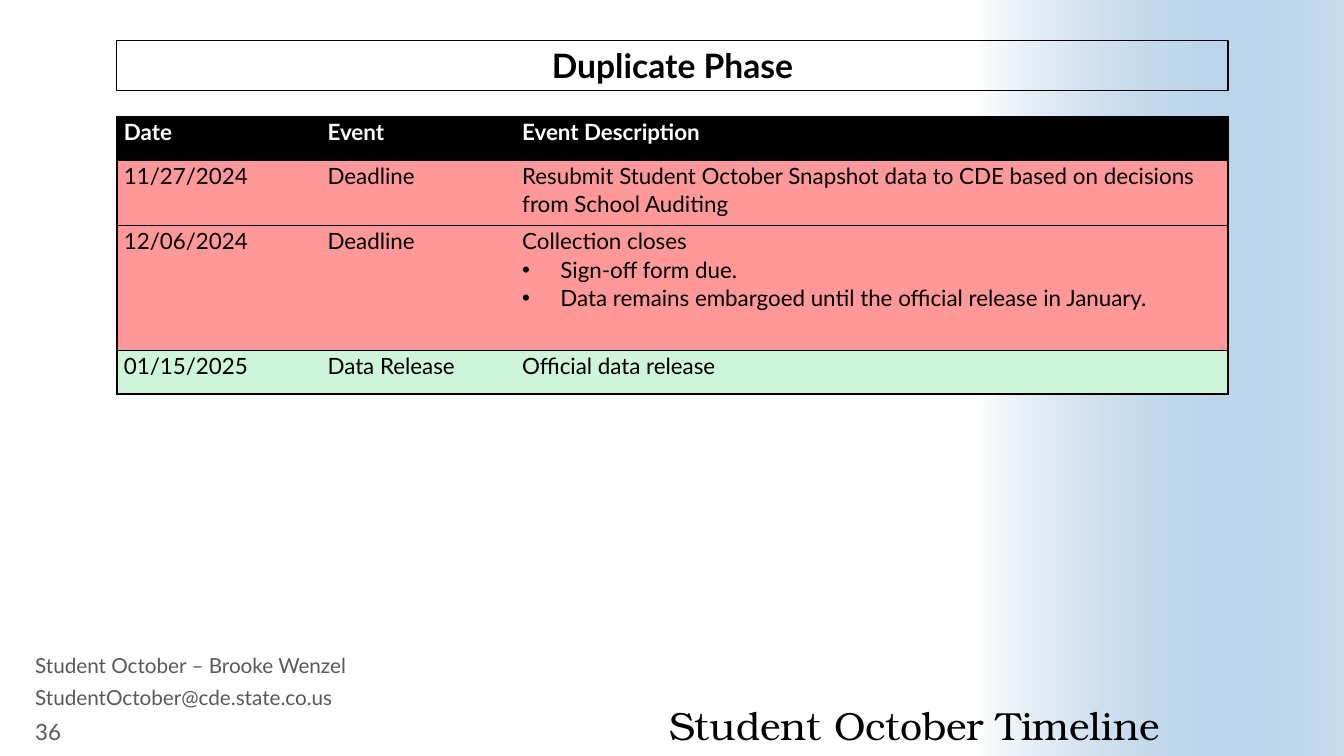
from lxml.etree import SubElement
from pptx import Presentation
from pptx.dml.color import RGBColor
from pptx.enum.shapes import MSO_SHAPE as Shape
from pptx.enum.text import MSO_ANCHOR as Anchor, PP_ALIGN as Align
from pptx.oxml import parse_xml
from pptx.oxml.ns import nsdecls, qn
from pptx.util import Inches, Pt

BLACK, WHITE, GRAY = "000000", "FFFFFF", "595959"
RED, GREEN = "FF9999", "CEF4DA"
BULLET = "•"

COLUMN_WIDTHS = (2.02, 1.93, 7.07)
# Row height, fill, text colour, bold, cell texts
TIMELINE = [
    (0.43, BLACK, WHITE, True, ("Date", "Event", "Event Description")),
    (0.65, RED, BLACK, False, (
        "11/27/2024", "Deadline",
        "Resubmit Student October Snapshot data to CDE based on decisions from School Auditing")),
    (1.24, RED, BLACK, False, (
        "12/06/2024", "Deadline",
        "Collection closes\n•Sign-off form due.\n"
        "•Data remains embargoed until the official release in January.")),
    (0.43, GREEN, BLACK, False, ("01/15/2025", "Data Release", "Official data release")),
]


def color(value):
    return RGBColor.from_string(value)


def add_bullet(para, indent):
    props = para._p.get_or_add_pPr()
    props.set("marL", str(indent))
    props.set("indent", str(-indent))
    SubElement(props, qn("a:buFont"), typeface="Arial")
    SubElement(props, qn("a:buChar"), char=BULLET)


def write(frame, text, *, size=16, font="Lato", ink=BLACK, bold=False,
          align=Align.LEFT, spacing=1.0):
    """Write one paragraph per line; a line that starts with a bullet becomes a list item."""
    frame.word_wrap = True
    for index, line in enumerate(text.split("\n")):
        para = frame.add_paragraph() if index else frame.paragraphs[0]
        if line.startswith(BULLET):
            add_bullet(para, Inches(0.38))
        para.alignment = align
        para.line_spacing = spacing
        span = para.add_run()
        span.text = line.removeprefix(BULLET)
        span.font.name = font
        span.font.size = Pt(size)
        span.font.bold = bold
        span.font.color.rgb = color(ink)


def add_text(page, text, left, top, width, height, *, anchor=Anchor.TOP, inset=None, **style):
    box = page.shapes.add_textbox(Inches(left), Inches(top), Inches(width), Inches(height))
    frame = box.text_frame
    frame.vertical_anchor = anchor
    if inset is not None:
        frame.margin_left = frame.margin_right = Inches(inset)
        frame.margin_top = frame.margin_bottom = Inches(inset)
    write(frame, text, **style)


def add_side_fade(page):
    """Fade from white to translucent blue along the right side of the slide."""
    panel = page.shapes.add_shape(
        Shape.RECTANGLE, Inches(7.75), Inches(1.92), Inches(7.5), Inches(3.66))
    panel.shadow.inherit = False
    panel.rotation = 270
    panel.line.fill.background()
    panel.fill.gradient()
    panel.fill.gradient_angle = 270
    start, end = panel.fill.gradient_stops
    start.color.rgb = color(WHITE)
    end.color.rgb = color("488BC9")
    end_color = panel._element.spPr.findall(".//" + qn("a:srgbClr"))[-1]
    SubElement(end_color, qn("a:alpha"), val="30000")


def add_banner(page, text):
    banner = page.shapes.add_shape(
        Shape.RECTANGLE, Inches(1.16), Inches(0.4), Inches(11.02), Inches(0.5))
    banner.shadow.inherit = False
    banner.fill.background()
    banner.line.color.rgb = color(BLACK)
    banner.line.width = Pt(0.75)
    banner.text_frame.vertical_anchor = Anchor.MIDDLE
    write(banner.text_frame, text, size=24, bold=True, align=Align.CENTER)


def set_borders(cell, visible_sides):
    props = cell._tc.get_or_add_tcPr()
    for index, side in enumerate("LRTB"):
        paint = "<a:noFill/>"
        if side in visible_sides:
            paint = f'<a:solidFill><a:srgbClr val="{BLACK}"/></a:solidFill>'
        props.insert(index, parse_xml(
            f'<a:ln{side} {nsdecls("a")} w="{Pt(1)}">{paint}</a:ln{side}>'))


def add_timeline(page):
    heights = [row[0] for row in TIMELINE]
    table = page.shapes.add_table(
        len(TIMELINE), len(COLUMN_WIDTHS), Inches(1.16), Inches(1.16),
        Inches(sum(COLUMN_WIDTHS)), Inches(sum(heights))).table
    table.first_row = table.horz_banding = False
    for column, width in zip(table.columns, COLUMN_WIDTHS):
        column.width = Inches(width)
    outer_sides = ("L", "", "R")
    for row, (height, fill, ink, bold, texts) in zip(table.rows, TIMELINE):
        row.height = Inches(height)
        for cell, text, outer in zip(row.cells, texts, outer_sides):
            cell.margin_left = cell.margin_right = Inches(0.07)
            cell.margin_top = cell.margin_bottom = 0
            cell.fill.solid()
            cell.fill.fore_color.rgb = color(fill)
            set_borders(cell, "TB" + outer)
            write(cell.text_frame, text, ink=ink, bold=bold, spacing=1.07)


def main():
    deck = Presentation()
    deck.slide_width, deck.slide_height = Inches(13.33), Inches(7.5)
    page = deck.slides.add_slide(deck.slide_layouts[6])
    add_side_fade(page)
    add_text(page, "Student October Timeline", 4.26, 6.45, 7.24, 0.98, anchor=Anchor.BOTTOM,
             inset=0, size=28, font="TeX Gyre Bonum", align=Align.RIGHT, spacing=0.9)
    add_banner(page, "Duplicate Phase")
    add_timeline(page)
    contact = ("Student October – Brooke Wenzel", "StudentOctober@cde.state.co.us")
    for index, line in enumerate(contact):
        add_text(page, line, 0.25, 6.47 + 0.32 * index, 3.89, 0.31,
                 size=14.8, ink=GRAY, spacing=0.8)
    add_text(page, "36", 0.25, 7.1, 0.85, 0.31, anchor=Anchor.MIDDLE, ink=GRAY)
    deck.save("out.pptx")


if __name__ == "__main__":
    main()
